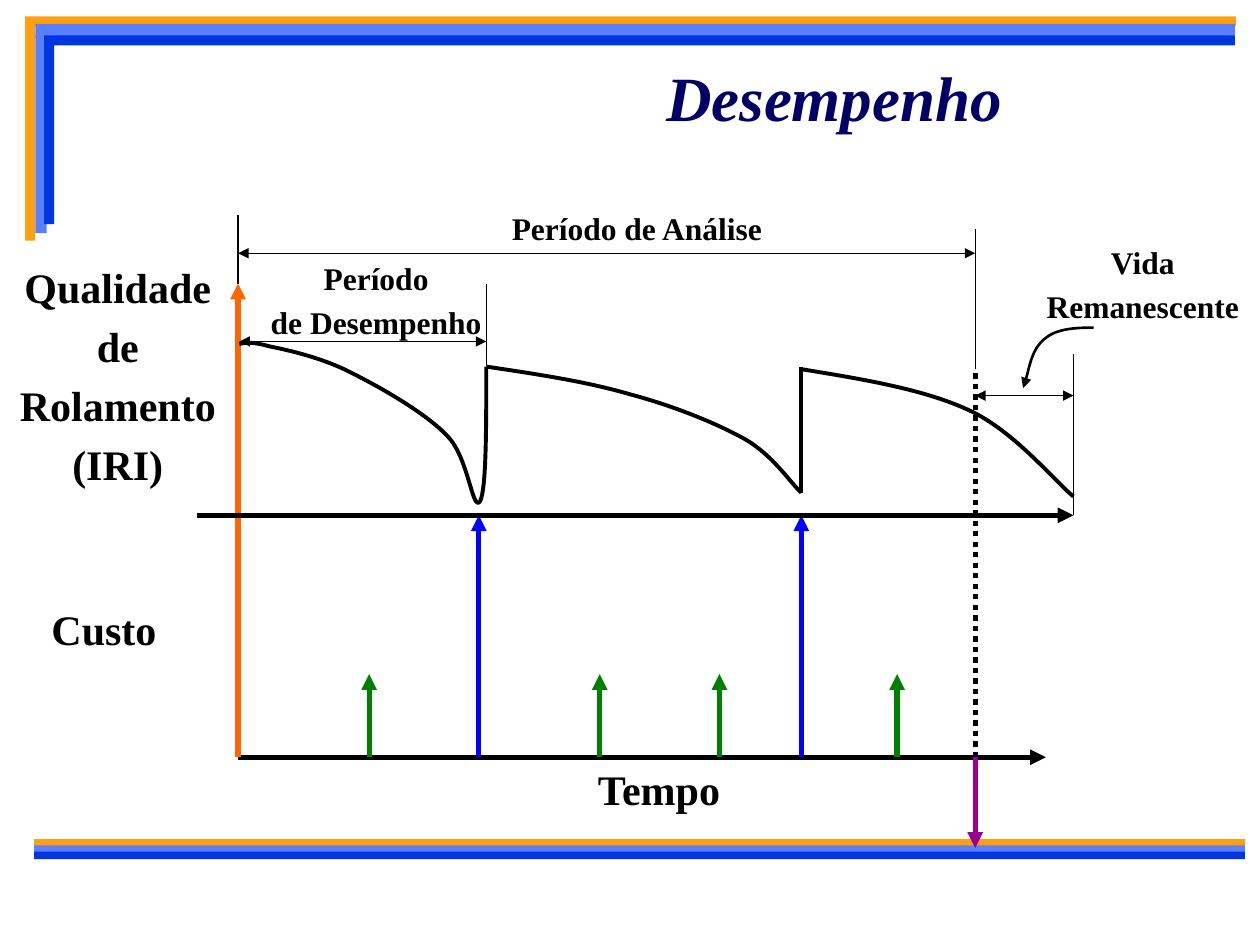
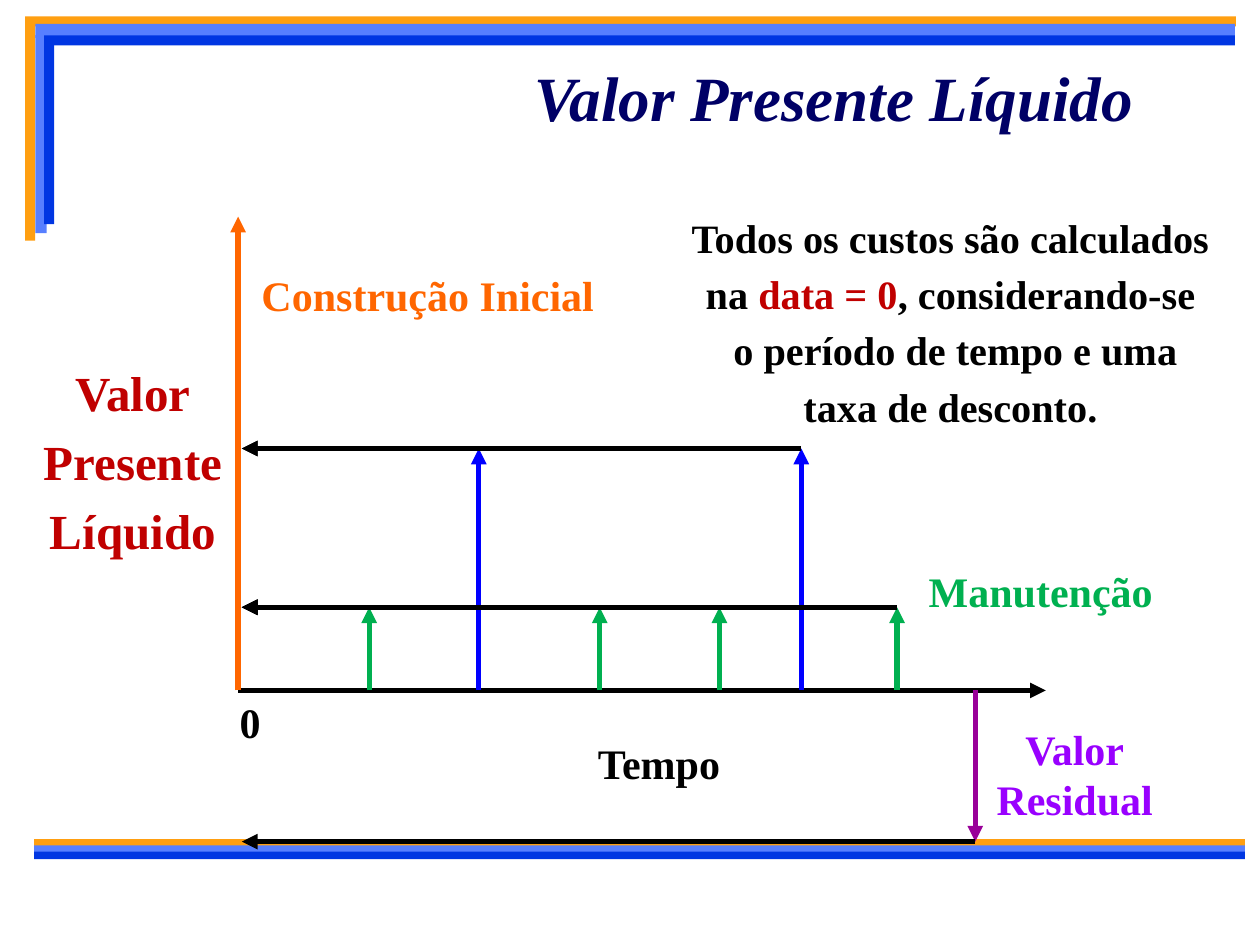
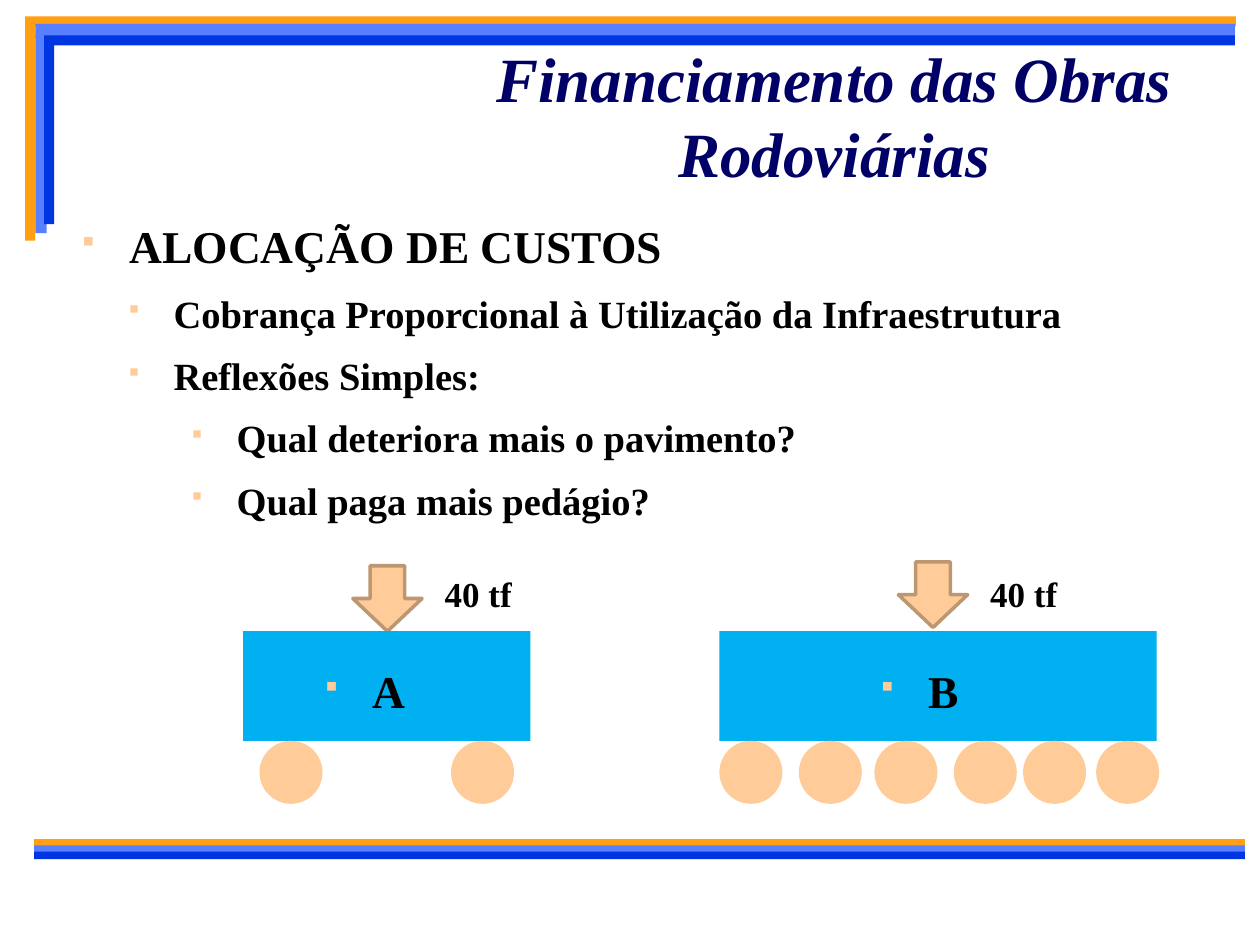
from lxml.etree import SubElement
from pptx import Presentation
from pptx.dml.color import RGBColor
from pptx.enum.dml import MSO_LINE
from pptx.enum.shapes import MSO_CONNECTOR, MSO_SHAPE
from pptx.enum.text import MSO_ANCHOR, MSO_AUTO_SIZE, PP_ALIGN
from pptx.oxml.ns import qn
from pptx.util import Inches, Pt

FONT = "Times New Roman"
COLORS = {
    "orange_band": "FF9F11", "light_band": "577FFF", "dark_band": "0036E2",
    "title": "000066", "black": "000000", "construction": "FF6600",
    "rehabilitation": "0000FF", "dark_green": "008000", "green": "00B050",
    "residual": "990099", "violet": "9900FF", "red": "C00000",
    "peach": "FFCC99", "arrow_edge": "BD9771", "truck": "00B0F0",
}

BANDS = [
    ("orange_band", 0.2, 0.18, 0.08, 1.73),
    ("light_band", 0.28, 0.28, 0.09, 1.57),
    ("dark_band", 0.35, 0.28, 0.08, 1.5),
    ("orange_band", 0.2, 0.13, 9.61, 0.08),
    ("light_band", 0.28, 0.19, 9.52, 0.11),
    ("dark_band", 0.35, 0.28, 9.45, 0.08),
    ("orange_band", 0.27, 6.66, 9.61, 0.06),
    ("light_band", 0.27, 6.71, 9.61, 0.06),
    ("dark_band", 0.27, 6.76, 9.61, 0.06),
]
TITLE_BOX = (3.43, 0.36, 6.38, 0.81)
TALL_TITLE_BOX = (3.43, 0.44, 6.38, 0.94)

ORIGIN_X, TIME_END, HORIZON_X, LIFE_END = 1.89, 8.3, 7.74, 8.52
CONSTRUCTION_COST, REHABILITATION_COST, MAINTENANCE_COST = 3.76, 1.92, 0.66
REHABILITATION_TIMES = [3.8, 6.36]
MAINTENANCE_TIMES = [2.93, 4.76, 5.71, 7.12]
PRESENT_X = 1.92

PERFORMANCE_TIME_Y, QUALITY_AXIS_Y = 6.01, 4.09
PERFORMANCE_CURVES = [
    [(1.9, 2.73), (1.95, 2.72), (2, 2.71), (2.14, 2.75),
     (2.29, 2.78), (2.56, 2.84), (2.79, 2.96),
     (3.03, 3.08), (3.38, 3.28), (3.55, 3.46),
     (3.72, 3.63), (3.75, 4.07), (3.81, 3.98),
     (3.86, 3.89), (3.86, 3.4), (3.86, 2.91)],
    [(3.86, 2.91), (4.26, 2.97), (4.66, 3.03), (5, 3.13),
     (5.34, 3.22), (5.69, 3.36), (5.92, 3.49),
     (6.14, 3.62), (6.28, 3.84), (6.36, 3.91)],
    [(6.36, 2.93), (6.85, 3.01), (7.34, 3.09), (7.7, 3.26),
     (8.06, 3.43), (8.38, 3.83), (8.52, 3.94)],
]
REMAINING_LIFE_POINTER = [
    (8.68, 2.6), (8.53, 2.6), (8.38, 2.61), (8.29, 2.69),
    (8.19, 2.77), (8.15, 3.01), (8.12, 3.08)]
PERIOD_LIMITS = [
    ((3.86, 2.25), (3.86, 2.9)),
    ((HORIZON_X, 2.93), (HORIZON_X, 1.82)),
    ((ORIGIN_X, 1.71), (ORIGIN_X, 2.25)),
    ((LIFE_END, QUALITY_AXIS_Y), (LIFE_END, 2.81)),
]
PERIOD_SPANS = [
    ((1.9, 2.71), (3.86, 2.71)),
    ((ORIGIN_X, 2.01), (HORIZON_X, 2.01)),
    ((HORIZON_X, 3.14), (LIFE_END, 3.14)),
]
PERFORMANCE_LABELS = [
    ((4.64, 6.01, 1.18, 0.51), ["Tempo"], 24, "black"),
    ((0.05, 2.03, 1.77, 1.96), ["Qualidade", "de", "Rolamento", "(IRI)"], 24, "black"),
    ((0.3, 4.74, 1.05, 0.51), ["Custo"], 24, "black"),
    ((2.04, 2.01, 1.89, 0.77), ["Período", "de Desempenho"], 18, "black"),
    ((3.95, 1.61, 2.21, 0.4), ["Período de Análise"], 18, "black"),
    ((8.2, 1.88, 1.74, 0.77), ["Vida", "Remanescente"], 18, "black"),
]

VALUE_TIME_Y, RESIDUAL_Y = 5.48, 6.68
VALUE_LABELS = [
    ((4.64, 5.8, 1.18, 0.51), ["Tempo"], 24, "black"),
    ((0.24, 2.83, 1.63, 1.7), ["Valor", "Presente", "Líquido"], 28, "red"),
    ((1.96, 2.09, 2.87, 0.51), ["Construção Inicial"], 24, "construction"),
    ((7.26, 4.44, 2, 0.51), ["Manutenção"], 24, "green"),
    ((1.8, 5.48, 0.37, 0.51), ["0"], 24, "black"),
    ((5.37, 1.64, 4.35, 1.88), [
        "Todos os custos são calculados",
        [("na ", "black"), ("data = 0", "red"), (", considerando-se", "black")],
        " o período de tempo e uma",
        "taxa de desconto."], 23, "black"),
]
RESIDUAL_LABEL = ((7.8, 5.69, 1.46, 0.91), ["Valor", "Residual"], 24, "violet")

ALLOCATION_ITEMS = [
    (0, "ALOCAÇÃO DE CUSTOS"),
    (1, "Cobrança Proporcional à Utilização da Infraestrutura"),
    (1, "Reflexões Simples:"),
    (2, "Qual deteriora mais o pavimento?"),
    (2, "Qual paga mais pedágio?"),
]
LEVELS = [(26, 0.38, 0.38), (22, 0.73, 0.36), (22, 1.23, 0.36)]
BODY_TOP, WHEEL_TOP, WHEEL = 5.01, 5.88, 0.5
TRUCKS = [
    {"name": "A", "left": 1.93, "width": 2.28, "name_left": 2.48,
     "arrow": (2.8, 4.49), "load_left": 3.43, "wheels": [2.06, 3.58]},
    {"name": "B", "left": 5.71, "width": 3.47, "name_left": 6.89,
     "arrow": (7.13, 4.46), "load_left": 7.76,
     "wheels": [5.71, 6.34, 6.94, 7.57, 8.12, 8.7]},
]
LOAD = "40 tf"


def rgb(color):
    return RGBColor.from_string(COLORS[color])


def set_values(target, values):
    for name, value in values.items():
        setattr(target, name, value)


def place(shape, box):
    set_values(shape, dict(zip(("left", "top", "width", "height"), map(Inches, box))))


def add_block(slide, kind, box, fill, edge=None):
    shape = slide.shapes.add_shape(kind, *map(Inches, box))
    shape.shadow.inherit = False
    shape.fill.solid()
    shape.fill.fore_color.rgb = rgb(fill)
    if edge:
        shape.line.color.rgb = rgb(edge)
        shape.line.width = Pt(2)
    else:
        shape.line.fill.background()
    return shape


def style_line(shape, color, width, dash=None, head=False, tail=False):
    shape.line.color.rgb = rgb(color)
    shape.line.width = Pt(width)
    if dash:
        shape.line.dash_style = dash
    outline = shape.element.spPr.find(qn("a:ln"))
    for tag, wanted in (("a:headEnd", head), ("a:tailEnd", tail)):
        if wanted:
            SubElement(outline, qn(tag), type="triangle")


def add_line(slide, start, end, color="black", width=3, **ends):
    connector = slide.shapes.add_connector(
        MSO_CONNECTOR.STRAIGHT, *map(Inches, (*start, *end)))
    style_line(connector, color, width, **ends)
    SubElement(connector.element.spPr, qn("a:effectLst"))


def bend_segments(shape):
    outline = next(shape.element.iter(qn("a:path")))
    segments = outline.findall(qn("a:lnTo"))
    for first in range(0, len(segments), 3):
        bend = SubElement(outline, qn("a:cubicBezTo"))
        for segment in segments[first:first + 3]:
            bend.append(segment[0])
            outline.remove(segment)


def add_curve(slide, controls, width, tail=False):
    start, *others = [tuple(map(Inches, point)) for point in controls]
    builder = slide.shapes.build_freeform(*start)
    builder.add_line_segments(others, close=False)
    shape = builder.convert_to_shape()
    bend_segments(shape)
    shape.shadow.inherit = False
    shape.fill.background()
    style_line(shape, "black", width, tail=tail)


def write(paragraph, text, size, color="black", **extra):
    run = paragraph.add_run()
    run.text = text
    set_values(run.font, {"name": FONT, "size": Pt(size), "bold": True, **extra})
    run.font.color.rgb = rgb(color)


def add_text_frame(slide, box, wrap):
    frame = slide.shapes.add_textbox(*map(Inches, box)).text_frame
    frame.word_wrap = wrap
    return frame


def next_paragraph(frame, index):
    return frame.add_paragraph() if index else frame.paragraphs[0]


def add_label(slide, box, lines, size, color, gap=0.2):
    frame = add_text_frame(slide, box, False)
    frame.auto_size = MSO_AUTO_SIZE.SHAPE_TO_FIT_TEXT
    for index, line in enumerate(lines):
        paragraph = next_paragraph(frame, index)
        paragraph.alignment = PP_ALIGN.CENTER
        if index:
            paragraph.space_before = Pt(size * gap)
        for text, run_color in [(line, color)] if isinstance(line, str) else line:
            write(paragraph, text, size, run_color)


def add_bullets(slide, box, items):
    frame = add_text_frame(slide, box, True)
    for index, (level, text) in enumerate(items):
        size, margin, hanging = LEVELS[level]
        paragraph = next_paragraph(frame, index)
        properties = paragraph._p.get_or_add_pPr()
        properties.set("marL", str(Inches(margin)))
        properties.set("indent", str(-Inches(hanging)))
        bullet_color = SubElement(properties, qn("a:buClr"))
        SubElement(bullet_color, qn("a:srgbClr"), val=COLORS["peach"])
        SubElement(properties, qn("a:buSzPct"), val="65000")
        SubElement(properties, qn("a:buFont"), typeface="Wingdings", charset="2")
        SubElement(properties, qn("a:buChar"), char="§")
        set_values(paragraph, {"level": level, "alignment": PP_ALIGN.JUSTIFY,
                               "line_spacing": 1.1, "space_after": Pt(size * 0.1)})
        if index:
            paragraph.space_before = Pt(size * 0.2)
        write(paragraph, text, size)


def add_bands(slide, layout):
    for color, *box in BANDS:
        band = add_block(slide, MSO_SHAPE.RECTANGLE, box, color)
        layout.shapes.element.append(band.element)


def add_slide(presentation, title, box=TITLE_BOX):
    slide = presentation.slides.add_slide(presentation.slide_layouts[5])
    place(slide.shapes.title, box)
    frame = slide.shapes.title.text_frame
    set_values(frame, {"vertical_anchor": MSO_ANCHOR.MIDDLE, "word_wrap": True,
                       "auto_size": MSO_AUTO_SIZE.NONE})
    frame.paragraphs[0].alignment = PP_ALIGN.CENTER
    write(frame.paragraphs[0], title, 36, "title", italic=True)
    return slide


def add_cash_flow(slide, time_y, residual_y, maintenance_color):
    flows = [(ORIGIN_X, time_y - CONSTRUCTION_COST, "construction")]
    flows += [(x, time_y - MAINTENANCE_COST, maintenance_color) for x in MAINTENANCE_TIMES]
    flows += [(x, time_y - REHABILITATION_COST, "rehabilitation") for x in REHABILITATION_TIMES]
    flows.append((HORIZON_X, residual_y, "residual"))
    add_line(slide, (ORIGIN_X, time_y), (TIME_END, time_y), tail=True)
    for x, tip_y, color in flows:
        add_line(slide, (x, time_y), (x, tip_y), color, tail=True)


def build_performance(slide):
    add_cash_flow(slide, PERFORMANCE_TIME_Y, 6.73, "dark_green")
    for controls in PERFORMANCE_CURVES:
        add_curve(slide, controls, 2.25)
    add_line(slide, (6.36, 3.91), (6.36, 2.91), width=2.25)
    add_line(slide, (1.56, QUALITY_AXIS_Y), (LIFE_END, QUALITY_AXIS_Y), tail=True)
    for start, end in PERIOD_LIMITS:
        add_line(slide, start, end, width=0.75)
    for start, end in PERIOD_SPANS:
        add_line(slide, start, end, width=0.75, head=True, tail=True)
    add_line(slide, (HORIZON_X, PERFORMANCE_TIME_Y), (HORIZON_X, 2.93),
             dash=MSO_LINE.ROUND_DOT)
    add_curve(slide, REMAINING_LIFE_POINTER, 1.5, tail=True)
    for label in PERFORMANCE_LABELS:
        add_label(slide, *label)


def build_present_value(slide):
    add_cash_flow(slide, VALUE_TIME_Y, RESIDUAL_Y, "green")
    for label in VALUE_LABELS:
        add_label(slide, *label)
    add_label(slide, *RESIDUAL_LABEL, gap=0)
    discounts = [(x, VALUE_TIME_Y - MAINTENANCE_COST) for x in MAINTENANCE_TIMES]
    discounts += [(x, VALUE_TIME_Y - REHABILITATION_COST) for x in REHABILITATION_TIMES]
    discounts.append((HORIZON_X, RESIDUAL_Y))
    for x, y in discounts:
        add_line(slide, (x, y), (PRESENT_X, y), tail=True)


def build_financing(slide):
    add_bullets(slide, (0.55, 1.64, 8.91, 2.66), ALLOCATION_ITEMS)
    for truck in TRUCKS:
        add_block(slide, MSO_SHAPE.DOWN_ARROW, (*truck["arrow"], 0.55, 0.52),
                  "peach", "arrow_edge")
        add_block(slide, MSO_SHAPE.RECTANGLE,
                  (truck["left"], BODY_TOP, truck["width"], WHEEL_TOP - BODY_TOP), "truck")
        for left in truck["wheels"]:
            add_block(slide, MSO_SHAPE.FLOWCHART_CONNECTOR,
                      (left, WHEEL_TOP, WHEEL, WHEEL), "peach")
        add_bullets(slide, (truck["name_left"], 5.17, 1.1, 0.55), [(0, truck["name"])])
        frame = add_text_frame(slide, (truck["load_left"], 4.46, 0.79, 0.55), True)
        frame.paragraphs[0].line_spacing = 1.1
        write(frame.paragraphs[0], LOAD, 20)


def main():
    presentation = Presentation()
    set_values(presentation, {"slide_width": Inches(10), "slide_height": Inches(7.5)})
    performance = add_slide(presentation, "Desempenho")
    add_bands(performance, presentation.slide_layouts[5])
    build_performance(performance)
    build_present_value(add_slide(presentation, "Valor Presente Líquido"))
    build_financing(add_slide(presentation, "Financiamento das Obras Rodoviárias", TALL_TITLE_BOX))
    presentation.save("out.pptx")


if __name__ == "__main__":
    main()
